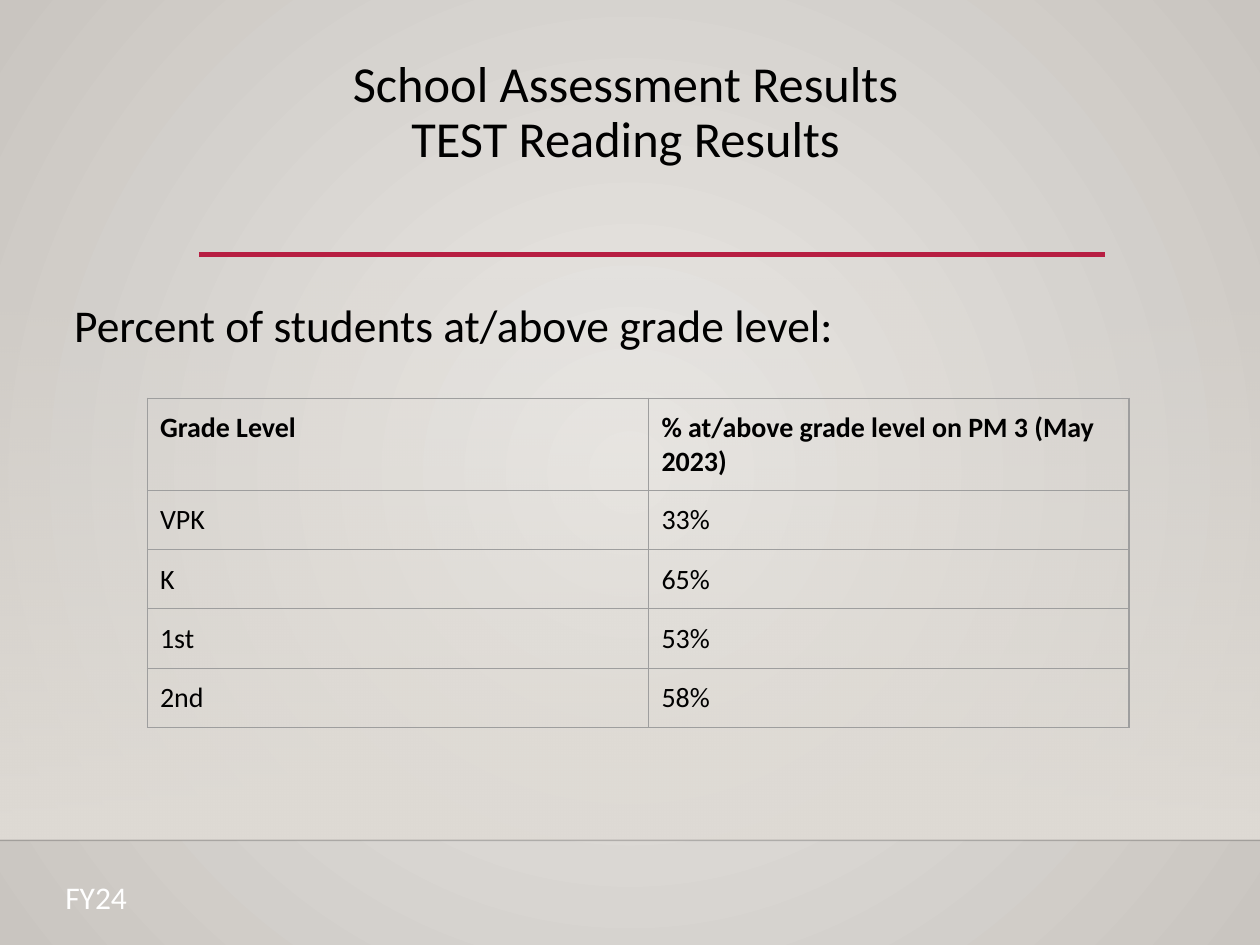
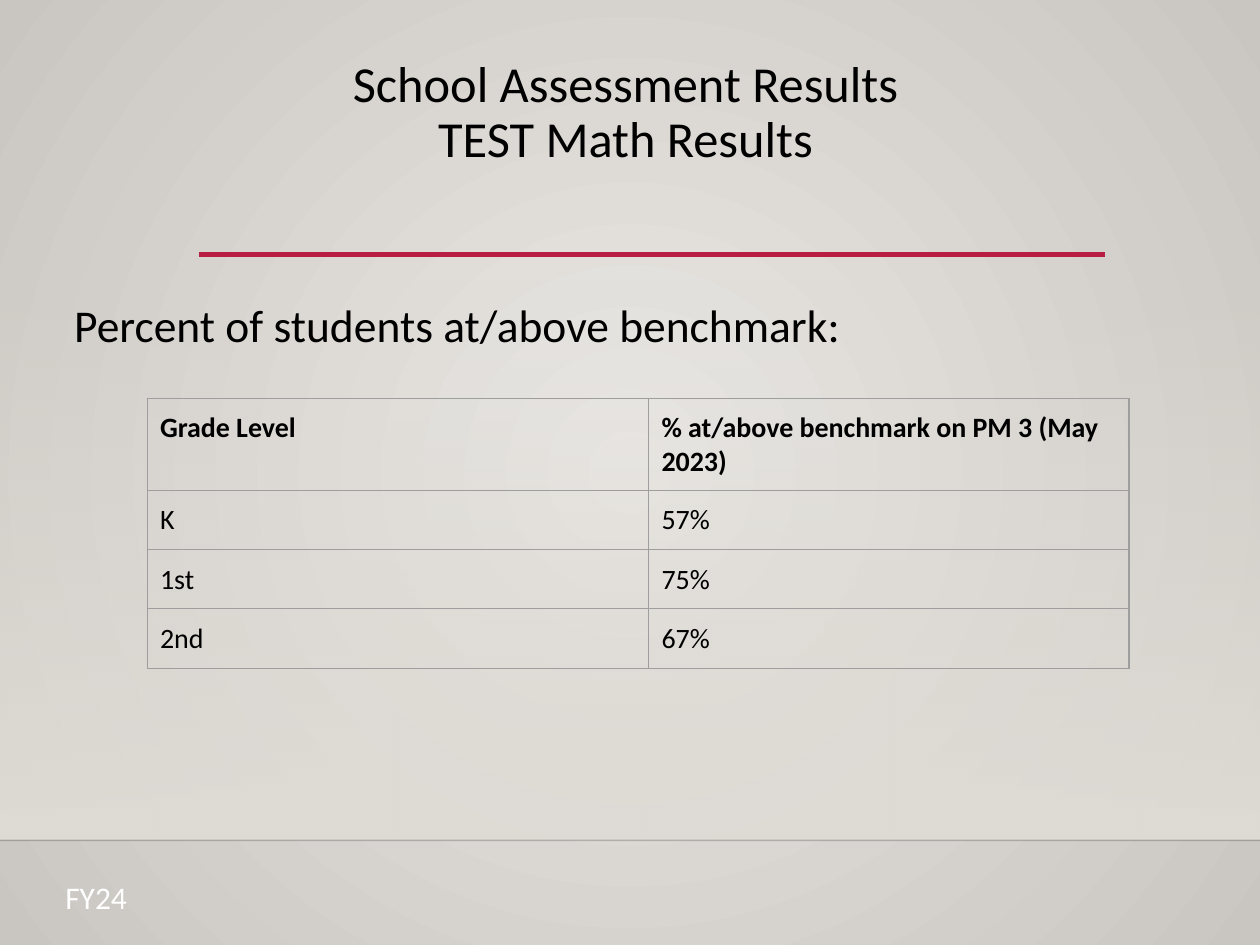
import pptx
import pptx.dml.color
import pptx.enum.shapes
import pptx.enum.text
import pptx.oxml
import pptx.oxml.ns
import pptx.util
from pptx.util import Inches

FONT = "Calibri"
BLACK, WHITE = "000000", "FFFFFF"
RULE_RED, EDGE = "B71E42", "000001"
BAND, GRID = "DFDBD5", "9E9E9E"
GLOW_CENTRE, GLOW_RIM = "EBE9E6", "C9C5C0"
LINEAR_DOWN = '<a:lin ang="5400000" scaled="0"/>'
FROM_CENTRE = ('<a:path path="circle"><a:fillToRect l="50000" t="50000" '
               'r="50000" b="50000"/></a:path>')
NAMESPACE = pptx.oxml.ns.nsdecls("a")
qn = pptx.oxml.ns.qn

SLIDES = [
    {"subject": "TEST Reading Results", "measure": "grade level", "title_height": 0.98,
     "scores": [("VPK", "33%"), ("K", "65%"), ("1st", "53%"), ("2nd", "58%")]},
    {"subject": "TEST Math Results", "measure": "benchmark", "title_height": 0.67,
     "scores": [("K", "57%"), ("1st", "75%"), ("2nd", "67%")]},
]


def colour(value):
    return pptx.dml.color.RGBColor.from_string(value)


def set_gradient(properties, start, end, direction, start_alpha=100):
    """Swap the solid fill of a properties element for a two-stop gradient."""
    gradient = pptx.oxml.parse_xml(
        f'<a:gradFill {NAMESPACE} rotWithShape="1"><a:gsLst>'
        f'<a:gs pos="0"><a:srgbClr val="{start}">'
        f'<a:alpha val="{start_alpha * 1000}"/></a:srgbClr></a:gs>'
        f'<a:gs pos="100000"><a:srgbClr val="{end}"/></a:gs>'
        f'</a:gsLst>{direction}</a:gradFill>')
    properties.replace(properties.find(qn("a:solidFill")), gradient)


def write(frame, lines, size, text_colour=BLACK, bold=False, **paragraph_format):
    frame.word_wrap = True
    for number, line in enumerate(lines):
        para = frame.paragraphs[0] if number == 0 else frame.add_paragraph()
        for name, value in paragraph_format.items():
            setattr(para, name, value)
        span = para.add_run()
        span.text = line
        font_format = {"name": FONT, "size": pptx.util.Pt(size), "bold": bold}
        for name, value in font_format.items():
            setattr(span.font, name, value)
        span.font.color.rgb = colour(text_colour)


def add_text(page, place, lines, size, **text_format):
    box = page.shapes.add_textbox(*map(Inches, place))
    write(box.text_frame, lines, size, **text_format)


def add_rule(page, left, right, top, line_colour, width, alpha=100):
    rule = page.shapes.add_connector(
        pptx.enum.shapes.MSO_CONNECTOR.STRAIGHT,
        Inches(left), Inches(top), Inches(right), Inches(top))
    rule.line.color.rgb = colour(line_colour)
    rule.line.width = pptx.util.Pt(width)
    properties = rule._element.spPr
    properties.find(".//" + qn("a:srgbClr")).append(
        pptx.oxml.parse_xml(f'<a:alpha {NAMESPACE} val="{alpha * 1000}"/>'))
    properties.append(pptx.oxml.parse_xml(f"<a:effectLst {NAMESPACE}/>"))


def add_backdrop(page):
    # Radial background
    page.background.fill.solid()
    set_gradient(page._element.find(".//" + qn("p:bgPr")),
                 GLOW_CENTRE, GLOW_RIM, FROM_CENTRE)
    # Band that fades in down to the footer edge
    band = page.shapes.add_shape(pptx.enum.shapes.MSO_SHAPE.RECTANGLE,
                                 *map(Inches, (0, 2.2, 10, 4.46)))
    band.shadow.inherit = False
    band.fill.solid()
    band.line.fill.background()
    set_gradient(band._element.spPr, BAND, BAND, LINEAR_DOWN, start_alpha=0)
    # Footer edge and title rule
    add_rule(page, 0, 10, 6.67, EDGE, 1, alpha=20)
    add_rule(page, 1.58, 8.77, 2.02, RULE_RED, 2.5)


def set_borders(cell):
    properties = cell._tc.get_or_add_tcPr()
    for position, side in enumerate(("lnL", "lnR", "lnT", "lnB")):
        properties.insert(position, pptx.oxml.parse_xml(
            f'<a:{side} {NAMESPACE} w="{pptx.util.Pt(0.75)}"><a:solidFill>'
            f'<a:srgbClr val="{GRID}"/></a:solidFill></a:{side}>'))


def add_score_table(page, left, top, rows):
    widths = [3.98, 3.81]
    heights = [0.73] + [0.47] * (len(rows) - 1)
    table = page.shapes.add_table(
        len(rows), len(widths), Inches(left), Inches(top),
        Inches(sum(widths)), Inches(sum(heights))).table
    table.first_row = table.horz_banding = False
    for column, width in zip(table.columns, widths):
        column.width = Inches(width)
    for row_number, (row, height) in enumerate(zip(rows, heights)):
        table.rows[row_number].height = Inches(height)
        for column_number, text in enumerate(row):
            cell = table.cell(row_number, column_number)
            for side in ("left", "right", "top", "bottom"):
                setattr(cell, f"margin_{side}", Inches(0.1))
            cell.fill.background()
            set_borders(cell)
            write(cell.text_frame, [text], 16, bold=row_number == 0)


def add_results_slide(deck, subject, measure, title_height, scores):
    page = deck.slides.add_slide(deck.slide_layouts[6])
    add_backdrop(page)
    # Title and lead-in
    add_text(page, (1.37, 0.42, 7.19, title_height),
             ["School Assessment Results", subject], 28.8,
             alignment=pptx.enum.text.PP_ALIGN.CENTER, line_spacing=0.9)
    add_text(page, (0.49, 2.31, 9.05, 3.36),
             [f"Percent of students at/above {measure}:"], 26)
    # Footer
    add_text(page, (0.42, 6.92, 5, 0.4), ["FY24"], 18, text_colour=WHITE)
    # Scores
    header = ("Grade Level", f"% at/above {measure} on PM 3 (May 2023)")
    add_score_table(page, 1.17, 3.16, [header] + scores)


def main():
    deck = pptx.Presentation()
    deck.slide_width, deck.slide_height = Inches(10), Inches(7.5)
    for content in SLIDES:
        add_results_slide(deck, **content)
    deck.save("out.pptx")


if __name__ == "__main__":
    main()
